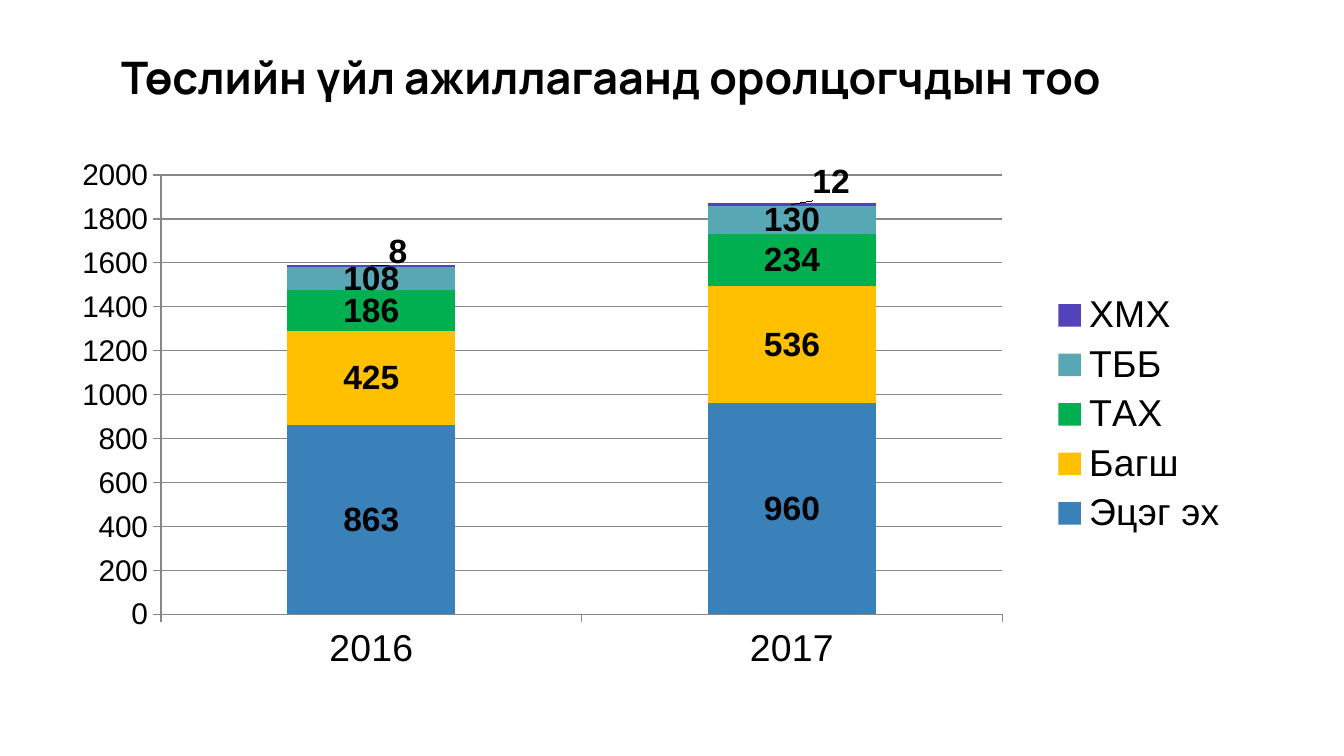
"""Build a slide with a stacked column chart of project participants by year."""
from pptx import Presentation
from pptx import util as u
from pptx.chart.data import CategoryChartData
from pptx.dml.color import RGBColor
from pptx.enum import chart as charts, text
from pptx.oxml import parse_xml
from pptx.oxml.ns import nsdecls

PX = 9525
BLACK = RGBColor(0x00, 0x00, 0x00)
GRAY = RGBColor(0x87, 0x87, 0x87)
BLUE = RGBColor(0x3A, 0x81, 0xBA)
AMBER = RGBColor(0xFF, 0xC0, 0x00)
GREEN = RGBColor(0x00, 0xB0, 0x50)
TEAL = RGBColor(0x57, 0xA7, 0xB5)
PURPLE = RGBColor(0x52, 0x43, 0xBB)

GROUPS = [
    ("Эцэг эх", (863, 960), BLUE),
    ("Багш", (425, 536), AMBER),
    ("ТАХ", (186, 234), GREEN),
    ("ТББ", (108, 130), TEAL),
    ("ХМХ", (8, 12), PURPLE),
]
CHART_WIDTH, CHART_HEIGHT = 847, 380
LABEL_SHIFTS = [(19, -10), (28, -16)]


def manual_layout(settings):
    """Return a chart layout element with the given child values."""
    children = "".join(f'<c:{name} val="{value}"/>' for name, value in settings.items())
    return parse_xml(
        f'<c:layout {nsdecls("c")}><c:manualLayout>{children}</c:manualLayout></c:layout>'
    )


def style_font(font, size, bold=False):
    """Set the common chart font with a size and weight."""
    font.name = "Arial"
    font.size = u.Pt(size)
    font.bold = bold
    font.color.rgb = BLACK


deck = Presentation()
deck.slide_width, deck.slide_height = 960 * PX, 540 * PX
page = deck.slides.add_slide(deck.slide_layouts[5])

title = page.shapes.title
title.left, title.top, title.width, title.height = 77 * PX, 26 * PX, 774 * PX, 90 * PX
frame = title.text_frame
frame.text = "Төслийн үйл ажиллагаанд оролцогчдын тоо"
frame.word_wrap = True
frame.auto_size = text.MSO_AUTO_SIZE.NONE
frame.vertical_anchor = text.MSO_ANCHOR.TOP
frame.margin_left = frame.margin_right = frame.margin_top = frame.margin_bottom = u.Inches(0.1)
para = frame.paragraphs[0]
para.alignment = text.PP_ALIGN.LEFT
para.font.name = "Manrope"
para.font.size = u.Pt(24)
para.font.bold = True
para.font.color.rgb = BLACK

data = CategoryChartData()
data.categories = ["2016", "2017"]
for name, values, color in GROUPS:
    data.add_series(name, values)
chart = page.shapes.add_chart(
    charts.XL_CHART_TYPE.COLUMN_STACKED,
    41 * PX, 106 * PX, CHART_WIDTH * PX, CHART_HEIGHT * PX, data,
).chart
chart.has_title = False
style_font(chart.font, 10)

chart.has_legend = True
chart.legend.position = charts.XL_LEGEND_POSITION.RIGHT
chart.legend.include_in_layout = False
style_font(chart.legend.font, 20)

for axis, size in ((chart.category_axis, 20), (chart.value_axis, 16)):
    axis.major_tick_mark = charts.XL_TICK_MARK.OUTSIDE
    axis.format.line.color.rgb = GRAY
    style_font(axis.tick_labels.font, size)
chart.value_axis.minimum_scale = 0
chart.value_axis.maximum_scale = 2000
chart.value_axis.major_unit = 200
chart.value_axis.has_major_gridlines = True
chart.value_axis.major_gridlines.format.line.color.rgb = GRAY

plot = chart.plots[0]
plot.gap_width = 150
plot.overlap = 100
plot.vary_by_categories = False
for series, (name, values, color) in zip(plot.series, GROUPS):
    series.format.fill.solid()
    series.format.fill.fore_color.rgb = color
    series.data_labels.show_value = True
    style_font(series.data_labels.font, 18, True)

top_series = plot.series[len(GROUPS) - 1]
for index, (right, down) in enumerate(LABEL_SHIFTS):
    style_font(top_series.points[index].data_label.font, 18, True)
    label = top_series._element.xpath(f"c:dLbls/c:dLbl[c:idx/@val='{index}']")[0]
    label.insert(1, manual_layout({"x": right / CHART_WIDTH, "y": down / CHART_HEIGHT}))

plot_area = chart._chartSpace.chart.plotArea
for layout in plot_area.xpath("c:layout"):
    plot_area.remove(layout)
plot_area.insert(0, manual_layout({
    "layoutTarget": "inner", "xMode": "edge", "yMode": "edge",
    "x": 74 / CHART_WIDTH, "y": 19 / CHART_HEIGHT,
    "w": 601 / CHART_WIDTH, "h": 314 / CHART_HEIGHT,
}))

deck.save("out.pptx")
